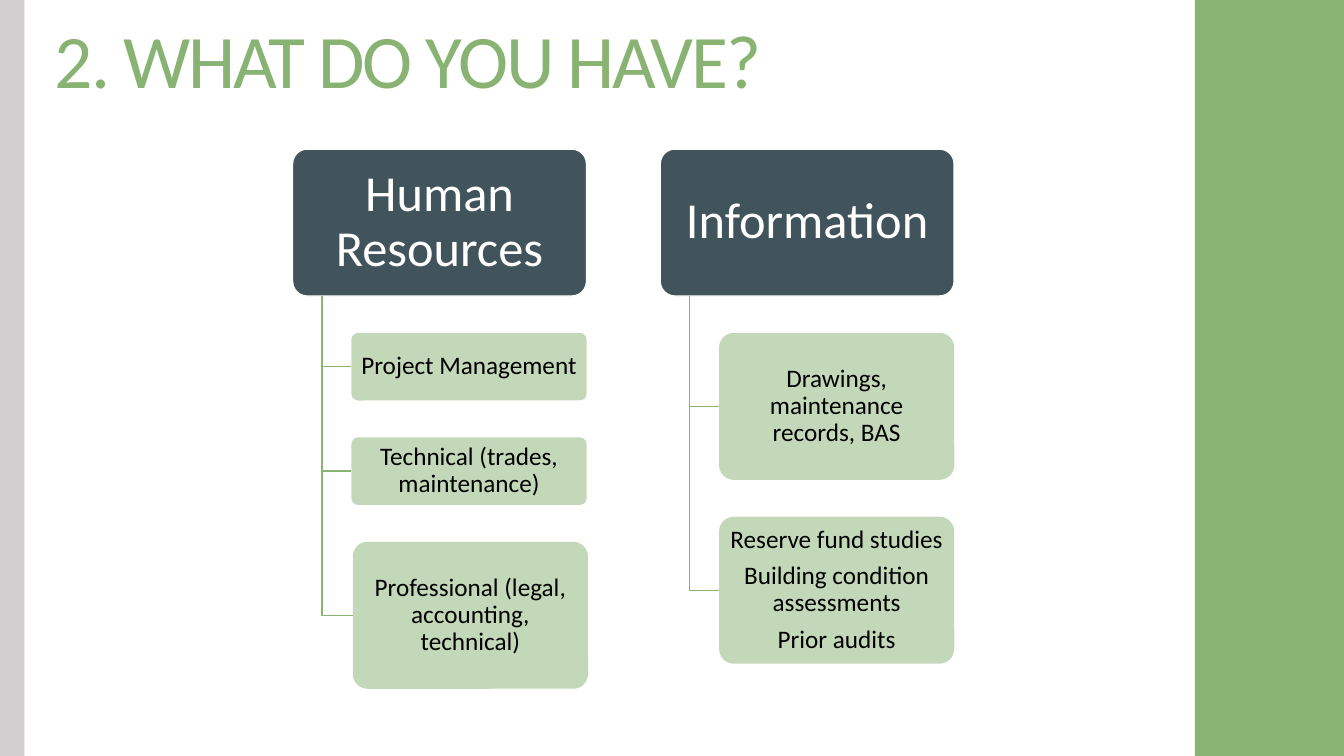
from pptx import Presentation
from pptx.dml.color import RGBColor
from pptx.enum.shapes import MSO_SHAPE as Shape
from pptx.enum.text import MSO_ANCHOR as Anchor, MSO_AUTO_SIZE as AutoSize, PP_ALIGN as Align
from pptx.oxml.ns import qn
from pptx.util import Pt
from lxml.etree import SubElement

COLOURS = {
    "green": "88B373",
    "grey": "D0CECE",
    "slate": "41535B",
    "white": "FFFFFF",
    "black": "000000",
}
FONT = "Calibri"
HEADER_W, BOX_H, SHORT_H = 210, 105, 48.3
GAP, INDENT, ITEM_W = 26.3, 42, 168

# Each item: text, height, extra shift to the right
BRANCHES = [
    ("Human Resources", [
        ("Project Management", SHORT_H, 0),
        ("Technical (trades, maintenance)", SHORT_H, 0),
        ("Professional (legal, accounting, technical)", BOX_H, 1),
    ]),
    ("Information", [
        ("Drawings, maintenance records, BAS", BOX_H, 0),
        ("Reserve fund studies\nBuilding condition assessments\nPrior audits", BOX_H, 0),
    ]),
]


def colour(name):
    return RGBColor.from_string(COLOURS[name])


def add_filled(slide, kind, left, top, width, height, fill):
    box = slide.shapes.add_shape(kind, Pt(left), Pt(top), Pt(width), Pt(height))
    box.shadow.inherit = False
    box.fill.solid()
    box.fill.fore_color.rgb = colour(fill)
    box.line.fill.background()
    return box


def format_text(frame, size, ink, align):
    for paragraph in frame.paragraphs:
        paragraph.alignment = align
        paragraph.line_spacing = 0.9
        for run in paragraph.runs:
            run.font.size = Pt(size)
            run.font.name = FONT
            run.font.color.rgb = colour(ink)


def add_label(box, text, size, ink, inset_x, inset_y):
    frame = box.text_frame
    frame.text = text
    frame.word_wrap = True
    frame.vertical_anchor = Anchor.MIDDLE
    frame.margin_left = frame.margin_right = Pt(inset_x)
    frame.margin_top = frame.margin_bottom = Pt(inset_y)
    format_text(frame, size, ink, Align.CENTER)
    for paragraph in frame.paragraphs[:-1]:
        paragraph.space_after = Pt(0.35 * size)


def add_title(slide, left, top, width, height):
    title = slide.shapes.title
    title.left, title.top, title.width, title.height = map(Pt, (left, top, width, height))
    frame = title.text_frame
    frame.text = "2. WHAT DO YOU HAVE?"
    frame.auto_size = AutoSize.NONE
    frame.vertical_anchor = Anchor.TOP
    format_text(frame, 54, "green", Align.LEFT)
    frame.paragraphs[0].space_before = Pt(0)
    frame.paragraphs[0].runs[0].font._element.set("spc", "-150")


def add_elbow(slide, left, top, right, bottom):
    """Draw a line down and then right, from a header to one of its items."""
    builder = slide.shapes.build_freeform(Pt(left), Pt(top))
    builder.add_line_segments([(Pt(left), Pt(bottom)), (Pt(right), Pt(bottom))], close=False)
    elbow = builder.convert_to_shape()
    elbow.shadow.inherit = False
    elbow.fill.background()
    elbow.line.color.rgb = colour("green")
    elbow.line.width = Pt(1)


def add_item(slide, left, top, height, text):
    item = add_filled(slide, Shape.ROUNDED_RECTANGLE, left, top, ITEM_W, height, "green")
    item.adjustments[0] = 0.1
    tint = item._element.spPr.find(qn("a:solidFill"))[0]
    SubElement(tint, qn("a:alpha")).set("val", "50000")
    add_label(item, text, 18, "black", 3, 2)


def add_branch(slide, left, top, heading, items):
    header = add_filled(slide, Shape.ROUNDED_RECTANGLE, left, top, HEADER_W, BOX_H, "slate")
    header.adjustments[0] = 0.1
    header.line.color.rgb = colour("white")
    header.line.width = Pt(1)
    add_label(header, heading, 36, "white", 5, 3.5)

    header_bottom = top + BOX_H
    item_top = header_bottom + GAP
    for text, height, shift in items:
        item_left = left + INDENT + shift
        add_elbow(slide, left + INDENT / 2, header_bottom, item_left, item_top + height / 2)
        add_item(slide, item_left, item_top, height, text)
        item_top += height + GAP


def main():
    deck = Presentation()
    deck.slide_width, deck.slide_height = Pt(960), Pt(540)
    slide = deck.slides.add_slide(deck.slide_layouts[5])
    add_filled(slide, Shape.RECTANGLE, 853.5, 0, 106.5, 540, "green")
    add_filled(slide, Shape.RECTANGLE, 0, 0, 17.5, 540, "grey")
    for column, (heading, items) in enumerate(BRANCHES):
        add_branch(slide, 209 + column * 262.6, 106.5, heading, items)
    add_title(slide, 32, 13, 538, 66)
    deck.save("out.pptx")


if __name__ == "__main__":
    main()
